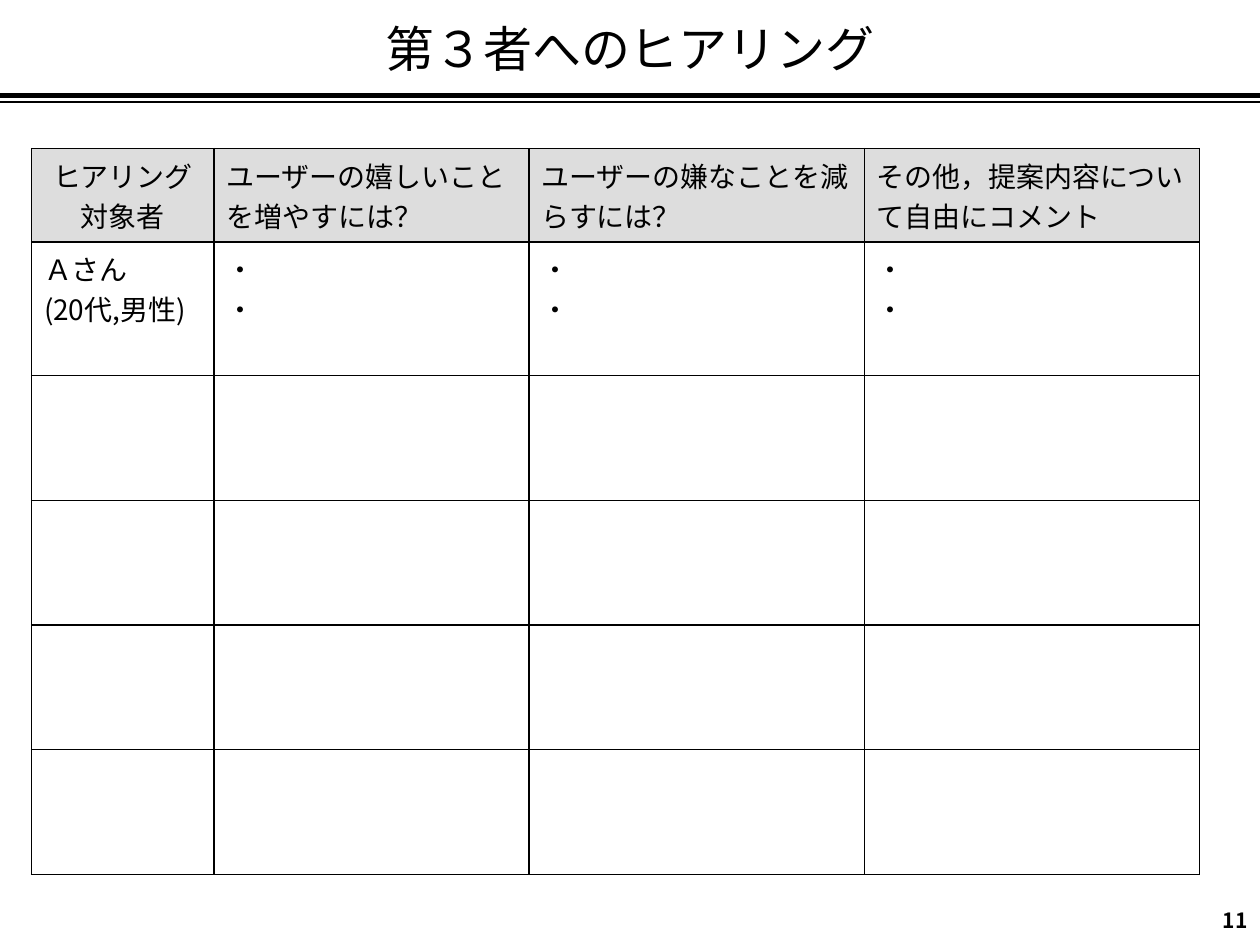
from lxml import etree
from pptx import Presentation, util as u
from pptx.dml.color import RGBColor
from pptx.enum import shapes, text
from pptx.oxml.ns import qn

BLACK = RGBColor(0x00, 0x00, 0x00)
GREY = RGBColor(0xDD, 0xDD, 0xDD)
FONT = "Noto Sans CJK JP"
W, H = u.Inches(10), u.Inches(7.5)
CENTER, LEFT, RIGHT = text.PP_ALIGN.CENTER, text.PP_ALIGN.LEFT, text.PP_ALIGN.RIGHT
MIDDLE, TOP = text.MSO_ANCHOR.MIDDLE, text.MSO_ANCHOR.TOP

COLUMNS = [1.45, 2.5, 2.66, 2.66]
ROWS = [0.49] + [0.99] * 5
HEADERS = ["ヒアリング\n対象者", "ユーザーの嬉しいことを増やすには？",
           "ユーザーの嫌なことを減らすには？", "その他，提案内容について自由にコメント"]
ANSWERS = ["Ａさん\n(20代,男性)"] + ["・\n・"] * 3


def write(tf, content, size=16, bold=False, align=LEFT):
    """Fill a text frame with one paragraph for each line of content."""
    tf.word_wrap = True
    for i, line in enumerate(content.split("\n")):
        p = tf.paragraphs[0] if i == 0 else tf.add_paragraph()
        p.alignment = align
        r = p.add_run()
        r.text = line
        r.font.name, r.font.size, r.font.bold = FONT, u.Pt(size), bold
        r.font.color.rgb = BLACK
        latin = r.font._element.find(qn("a:latin"))
        latin.addnext(latin.makeelement(qn("a:ea"), {"typeface": FONT}))


def add_rule(s, y, width):
    line = s.shapes.add_connector(shapes.MSO_CONNECTOR.STRAIGHT, 0, y, W, y)
    line.line.color.rgb, line.line.width = BLACK, u.Pt(width)
    etree.SubElement(line._element.spPr, qn("a:effectLst"))


def add_header(s, height):
    """Place the title across the top, with a double rule beneath it."""
    title = s.shapes.title
    title.left, title.top, title.width, title.height = 0, 0, W, height
    tf = title.text_frame
    tf.auto_size, tf.vertical_anchor = text.MSO_AUTO_SIZE.NONE, MIDDLE
    write(tf, "第３者へのヒアリング", size=28, align=CENTER)
    add_rule(s, height, 3)
    add_rule(s, height + u.Inches(0.05), 1)


def add_borders(cell, width=1):
    tcPr = cell._tc.get_or_add_tcPr()
    for i, side in enumerate(("lnL", "lnR", "lnT", "lnB")):
        ln = tcPr.makeelement(qn(f"a:{side}"), {"w": str(u.Pt(width))})
        fill = etree.SubElement(ln, qn("a:solidFill"))
        etree.SubElement(fill, qn("a:srgbClr"), val=str(BLACK))
        tcPr.insert(i, ln)


def add_hearing_table(s, left, top):
    table = s.shapes.add_table(len(ROWS), len(COLUMNS), left, top,
                               u.Inches(sum(COLUMNS)), u.Inches(sum(ROWS))).table
    for column, width in zip(table.columns, COLUMNS):
        column.width = u.Inches(width)
    for row, height in zip(table.rows, ROWS):
        row.height = u.Inches(height)
    for i, row in enumerate(table.rows):
        for j, cell in enumerate(row.cells):
            add_borders(cell)
            if i == 0:
                cell.fill.solid()
                cell.fill.fore_color.rgb = GREY
                cell.vertical_anchor = MIDDLE
                write(cell.text_frame, HEADERS[j], align=CENTER if j == 0 else LEFT)
            else:
                cell.fill.background()
                cell.vertical_anchor = TOP
                if i == 1:
                    write(cell.text_frame, ANSWERS[j])


def add_page_number(s, number, width, height):
    """Place the page number in the bottom right corner."""
    tf = s.shapes.add_textbox(W - width, H - height, width, height).text_frame
    tf.vertical_anchor = MIDDLE
    write(tf, number, size=12, bold=True, align=RIGHT)


def main():
    prs = Presentation()
    prs.slide_width, prs.slide_height = W, H
    s = prs.slides.add_slide(prs.slide_layouts[5])
    add_header(s, u.Inches(0.76))
    add_hearing_table(s, u.Inches(0.25), u.Inches(1.18))
    add_page_number(s, "11", u.Inches(0.48), u.Inches(0.4))
    prs.save("out.pptx")


if __name__ == "__main__":
    main()
